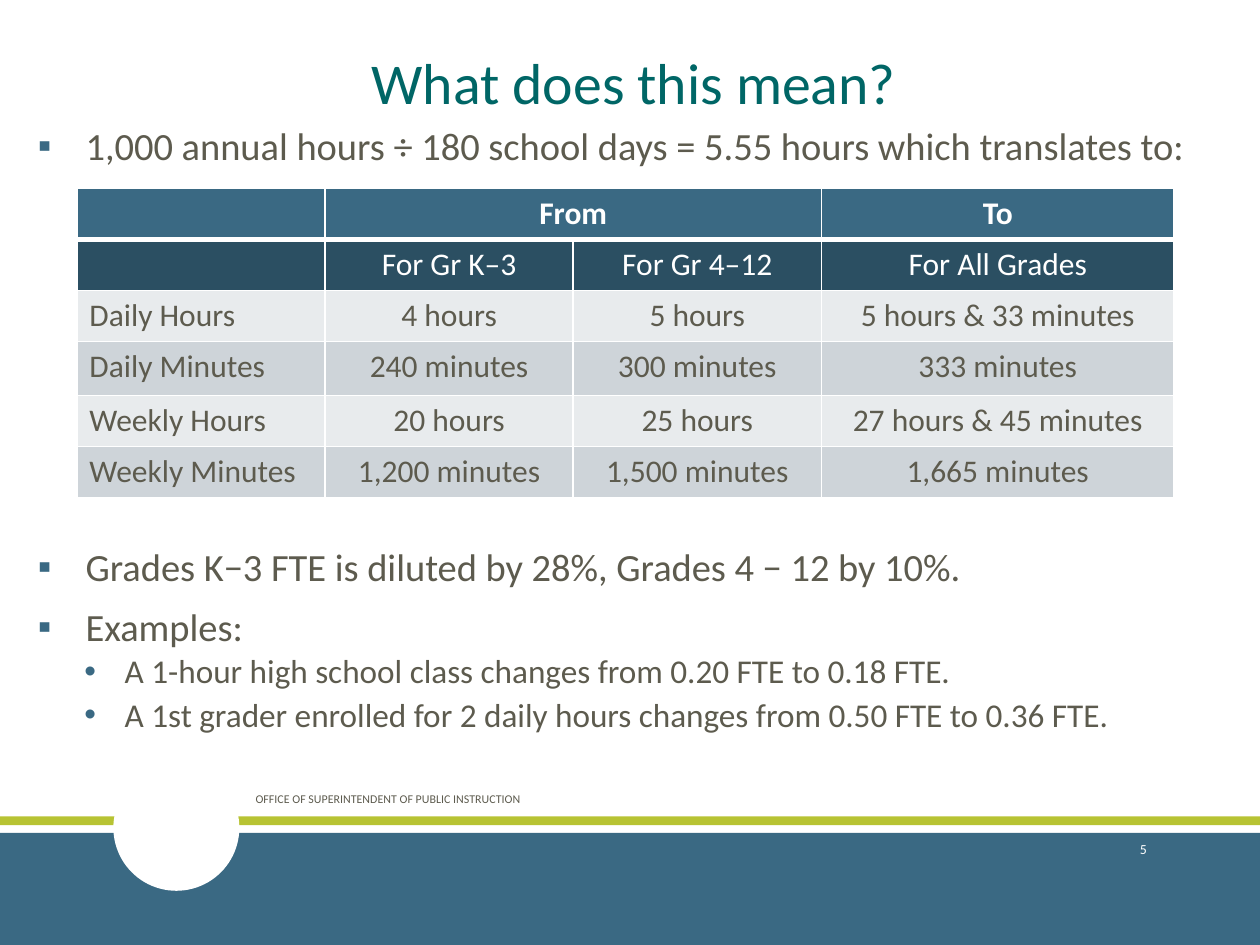
import dataclasses

import pptx
import pptx.dml.color
import pptx.enum.shapes
import pptx.enum.text
import pptx.oxml
import pptx.oxml.ns
import pptx.util

ALIGN = pptx.enum.text.PP_ALIGN
ANCHOR = pptx.enum.text.MSO_ANCHOR
SHAPE = pptx.enum.shapes.MSO_SHAPE
GRID = pptx.util.Inches(0.1)  # the slide is 100 columns by 75 rows


@dataclasses.dataclass(frozen=True)
class Theme:
    font: str = "Calibri"
    white: str = "FFFFFF"
    ink: str = "5D5B4E"
    title: str = "006666"
    blue: str = "3A6983"
    navy: str = "2B4F62"
    lime: str = "B7C333"
    bands: tuple = ("E8EBED", "CED4D9")
    title_size: float = 33
    body_size: float = 22
    example_size: float = 19
    table_size: float = 18
    footer_size: float = 6.8
    number_size: float = 7.9


THEME = Theme()

BULLET_STYLES = (
    {"mark": "▪", "indent": 0.38, "hang": 0.38, "size": THEME.body_size, "before": 9, "after": 1.5},
    {"mark": "•", "indent": 0.69, "hang": 0.32, "size": THEME.example_size, "before": 1.5, "after": 3},
)
TOP_BULLETS = (
    (0, "1,000 annual hours ÷ 180 school days = 5.55 hours which translates to:"),
)
LOWER_BULLETS = (
    (0, "Grades K−3 FTE is diluted by 28%, Grades 4 − 12 by 10%."),
    (0, "Examples:"),
    (1, "A 1-hour high school class changes from 0.20 FTE to 0.18 FTE."),
    (1, "A 1st grader enrolled for 2 daily hours changes from 0.50 FTE to 0.36 FTE."),
)
HOURS = (
    ("", "From", "", "To"),
    ("", "For Gr K–3", "For Gr 4–12", "For All Grades"),
    ("Daily Hours", "4 hours", "5 hours", "5 hours & 33 minutes"),
    ("Daily Minutes", "240 minutes", "300 minutes", "333 minutes"),
    ("Weekly Hours", "20 hours", "25 hours", "27 hours & 45 minutes"),
    ("Weekly Minutes", "1,200 minutes", "1,500 minutes", "1,665 minutes"),
)
COLUMN_WIDTHS = (19.7, 19.7, 19.7, 28)
ROW_HEIGHTS = (4.05, 4.05, 4.05, 4.3, 4.05, 4.05)


def cells(*counts):
    """Turn counts of grid columns or rows into lengths."""
    return [round(count * GRID) for count in counts]


def rgb(color):
    return pptx.dml.color.RGBColor.from_string(color)


def apply(target, **values):
    for name, value in values.items():
        setattr(target, name, value)


def write(paragraph, text, size, color, bold=False, **formats):
    run = paragraph.add_run()
    run.text = text
    apply(run.font, name=THEME.font, size=pptx.util.Pt(size), bold=bold)
    run.font.color.rgb = rgb(color)
    apply(paragraph, **formats)


def add_bar(slide, kind, place, color):
    shape = slide.shapes.add_shape(kind, *cells(*place))
    shape.shadow.inherit = False
    shape.fill.solid()
    shape.fill.fore_color.rgb = rgb(color)
    shape.line.fill.background()


def add_title(slide, text, place):
    title = slide.shapes.title
    apply(title, **dict(zip(("left", "top", "width", "height"), cells(*place))))
    apply(title.text_frame, vertical_anchor=ANCHOR.BOTTOM, word_wrap=True,
          auto_size=pptx.enum.text.MSO_AUTO_SIZE.NONE)
    write(title.text_frame.paragraphs[0], text, THEME.title_size, THEME.title,
          alignment=ALIGN.CENTER, line_spacing=0.85)


def add_text_frame(slide, place, **formats):
    frame = slide.shapes.add_textbox(*cells(*place)).text_frame
    apply(frame, word_wrap=True, **formats)
    return frame


def add_label(slide, text, place, size, color, alignment=ALIGN.LEFT):
    frame = add_text_frame(slide, place, vertical_anchor=ANCHOR.MIDDLE)
    write(frame.paragraphs[0], text, size, color, alignment=alignment)


def set_bullet(paragraph, style):
    properties = paragraph._p.get_or_add_pPr()
    properties.set("marL", str(pptx.util.Inches(style["indent"])))
    properties.set("indent", str(-pptx.util.Inches(style["hang"])))
    namespace = pptx.oxml.ns.nsdecls("a")
    for xml in (
        f'<a:buClr {namespace}><a:srgbClr val="{THEME.blue}"/></a:buClr>',
        f'<a:buFont {namespace} typeface="Arial"/>',
        f'<a:buChar {namespace} char="{style["mark"]}"/>',
    ):
        properties.append(pptx.oxml.parse_xml(xml))


def add_bullets(slide, bullets, place):
    frame = add_text_frame(slide, place, margin_left=0, margin_right=0)
    for index, (level, text) in enumerate(bullets):
        paragraph = frame.add_paragraph() if index else frame.paragraphs[0]
        style = BULLET_STYLES[level]
        set_bullet(paragraph, style)
        write(paragraph, text, style["size"], THEME.ink, level=level, line_spacing=0.9,
              space_before=pptx.util.Pt(style["before"] if index else 0),
              space_after=pptx.util.Pt(style["after"]))


def set_borders(cell, **widths):
    """Draw white cell edges; widths are points by side: L, R, T, B."""
    properties = cell._tc.get_or_add_tcPr()
    for position, (side, width) in enumerate(widths.items()):
        properties.insert(position, pptx.oxml.parse_xml(
            f'<a:ln{side} {pptx.oxml.ns.nsdecls("a")} w="{pptx.util.Pt(width)}">'
            f'<a:solidFill><a:srgbClr val="{THEME.white}"/></a:solidFill></a:ln{side}>'))


def add_hours_table(slide, left, top):
    place = cells(left, top, sum(COLUMN_WIDTHS), sum(ROW_HEIGHTS))
    table = slide.shapes.add_table(len(HOURS), len(COLUMN_WIDTHS), *place).table
    for column, width in zip(table.columns, cells(*COLUMN_WIDTHS)):
        column.width = width
    for row, height in zip(table.rows, cells(*ROW_HEIGHTS)):
        row.height = height
    table.cell(0, 1).merge(table.cell(0, 2))
    fills = (THEME.blue, THEME.navy) + THEME.bands * 2
    for row, texts in enumerate(HOURS):
        for column, text in enumerate(texts):
            cell = table.cell(row, column)
            cell.fill.solid()
            cell.fill.fore_color.rgb = rgb(fills[row])
            set_borders(cell, L=1, R=1, T=3 if row == 1 else 1, B=3 if row == 0 else 1)
            if text:
                write(cell.text_frame.paragraphs[0], text, THEME.table_size,
                      THEME.white if row < 2 else THEME.ink, bold=row == 0,
                      alignment=ALIGN.CENTER if column else ALIGN.LEFT)


def add_footer(slide):
    add_bar(slide, SHAPE.RECTANGLE, (0, 64.8, 100, 0.7), THEME.lime)
    add_bar(slide, SHAPE.RECTANGLE, (0, 66.1, 100, 8.9), THEME.blue)
    add_bar(slide, SHAPE.OVAL, (9, 60.7, 10, 10), THEME.white)
    add_label(slide, "OFFICE OF SUPERINTENDENT OF PUBLIC INSTRUCTION", (19.3, 61.4, 39.6, 4),
              THEME.footer_size, THEME.ink)
    add_label(slide, "5", (81.2, 65.4, 10.8, 4), THEME.number_size, THEME.white, ALIGN.RIGHT)


def main():
    presentation = pptx.Presentation()
    apply(presentation, slide_width=100 * GRID, slide_height=75 * GRID)
    slide = presentation.slides.add_slide(presentation.slide_layouts.get_by_name("Title Only"))
    add_footer(slide)
    add_title(slide, "What does this mean?", (2, 3.7, 96.6, 6))
    add_bullets(slide, TOP_BULLETS, (3, 9.6, 93.4, 4.5))
    add_hours_table(slide, 6.1, 14.95)
    add_bullets(slide, LOWER_BULLETS, (3, 43, 93.4, 17))
    presentation.save("out.pptx")


if __name__ == "__main__":
    main()
